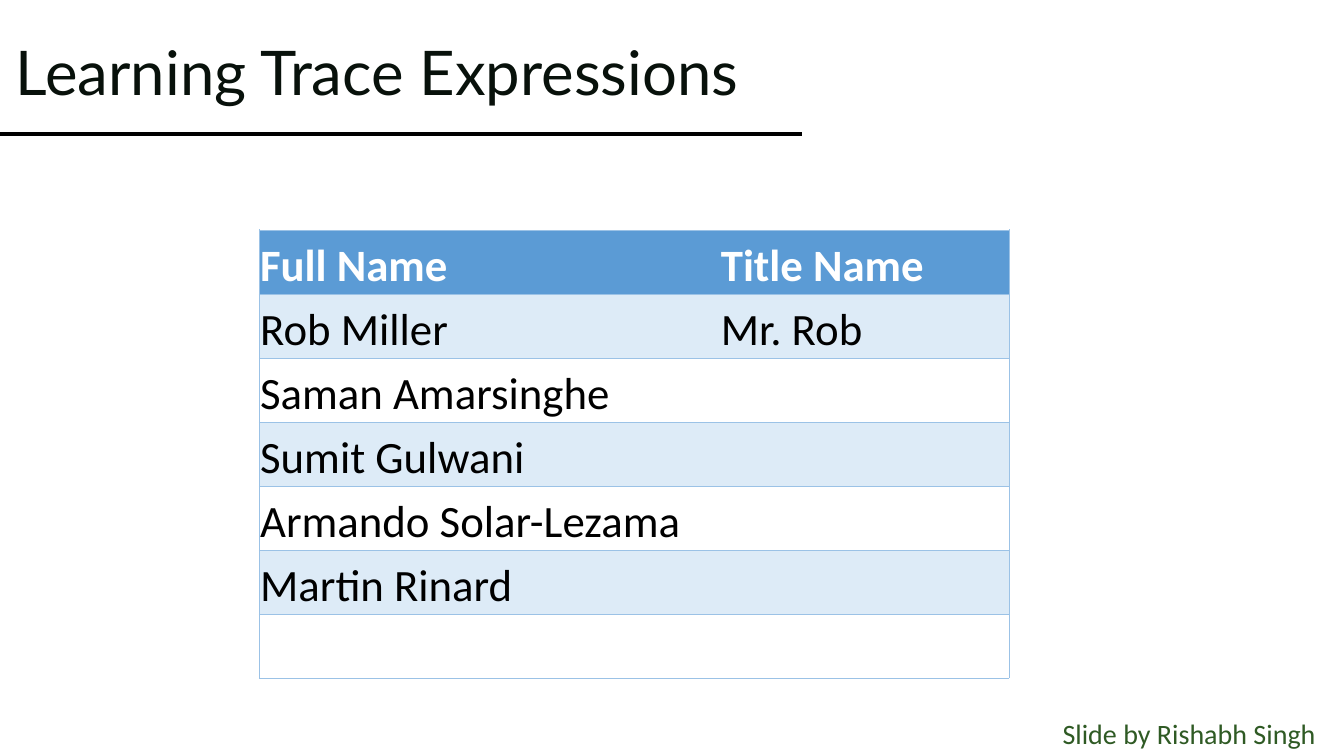
from lxml import etree
from pptx import Presentation, util as u
from pptx.dml.color import RGBColor
from pptx.enum import shapes, text
from pptx.oxml import ns

W, H = u.Inches(13.33), u.Inches(7.5)
COL, ROW = W / 100, H / 100

BLACK = RGBColor(0x00, 0x00, 0x00)
WHITE = RGBColor(0xFF, 0xFF, 0xFF)
INK = RGBColor(0x08, 0x11, 0x0B)
GREEN = RGBColor(0x2F, 0x5A, 0x24)
HEADER = RGBColor(0x5B, 0x9B, 0xD5)
BAND = RGBColor(0xDD, 0xEB, 0xF7)
BORDER = RGBColor(0x9B, 0xC2, 0xE6)

NO_STYLE = "{2D5ABB26-0587-4C30-8999-92F81FD0307C}"
NAMES = [
    ("Full Name", "Title Name"),
    ("Rob Miller", "Mr. Rob"),
    ("Saman Amarsinghe", ""),
    ("Sumit Gulwani", ""),
    ("Armando Solar-Lezama", ""),
    ("Martin Rinard", ""),
    ("", ""),
]
NAME_COLS = (34.28, 21.53)
NAME_ROW = 8.47


def cols(n):
    return u.Emu(round(n * COL))


def rows(n):
    return u.Emu(round(n * ROW))


def write(tf, content, size=18, font="Calibri", color=BLACK, bold=False, spacing=None):
    p = tf.paragraphs[0]
    p.line_spacing = spacing
    r = p.add_run()
    r.text = content
    r.font.size = u.Pt(size)
    r.font.name = font
    r.font.color.rgb = color
    r.font.bold = bold


def add_label(s, content, x, y, w, h, wrap=True, anchor=text.MSO_ANCHOR.TOP, **fmt):
    tf = s.shapes.add_textbox(cols(x), rows(y), cols(w), rows(h)).text_frame
    tf.word_wrap = wrap
    tf.vertical_anchor = anchor
    write(tf, content, **fmt)


def add_rule(s, x1, x2, y):
    line = s.shapes.add_connector(
        shapes.MSO_CONNECTOR.STRAIGHT, cols(x1), rows(y), cols(x2), rows(y))
    line.line.color.rgb = BLACK
    line.line.width = u.Pt(2.25)
    etree.SubElement(line._element.spPr, ns.qn("a:effectLst"))


def add_borders(cell, sides):
    tcPr = cell._tc.get_or_add_tcPr()
    for side in sides:
        ln = etree.SubElement(tcPr, ns.qn(f"a:ln{side}"), w=str(u.Pt(0.5)))
        fill = etree.SubElement(ln, ns.qn("a:solidFill"))
        etree.SubElement(fill, ns.qn("a:srgbClr"), val=str(BORDER))


def format_cell(cell, content, row, col):
    add_borders(cell, "RTB" if col else "LTB")
    if row % 2 or row == 0:
        cell.fill.solid()
        cell.fill.fore_color.rgb = BAND if row else HEADER
    else:
        cell.fill.background()
    if content:
        cell.margin_left = cell.margin_right = cell.margin_top = u.Inches(0.01)
        cell.margin_bottom = 0
        cell.vertical_anchor = text.MSO_ANCHOR.BOTTOM
        write(cell.text_frame, content, size=32,
              color=BLACK if row else WHITE, bold=row == 0)


def add_names(s, x, y):
    frame = s.shapes.add_table(
        len(NAMES), len(NAME_COLS), cols(x), rows(y),
        cols(sum(NAME_COLS)), rows(NAME_ROW * len(NAMES)))
    table = frame.table
    table._tbl.tblPr.find(ns.qn("a:tableStyleId")).text = NO_STYLE
    for column, width in zip(table.columns, NAME_COLS):
        column.width = cols(width)
    for i, names in enumerate(NAMES):
        table.rows[i].height = rows(NAME_ROW)
        for j, name in enumerate(names):
            format_cell(table.cell(i, j), name, i, j)


def main():
    prs = Presentation()
    prs.slide_width, prs.slide_height = W, H
    s = prs.slides.add_slide(prs.slide_layouts[6])
    add_rule(s, 0, 59.7, 17.73)
    add_label(s, "Learning Trace Expressions", 0.45, 0.4, 56.34, 19.33,
              anchor=text.MSO_ANCHOR.MIDDLE, size=44, font="Lato", color=INK, spacing=0.9)
    add_names(s, 19.28, 30.4)
    add_label(s, "Slide by Rishabh Singh", 78.32, 94.13, 20.55, 5.87,
              wrap=False, size=20, color=GREEN)
    prs.save("out.pptx")


if __name__ == "__main__":
    main()
